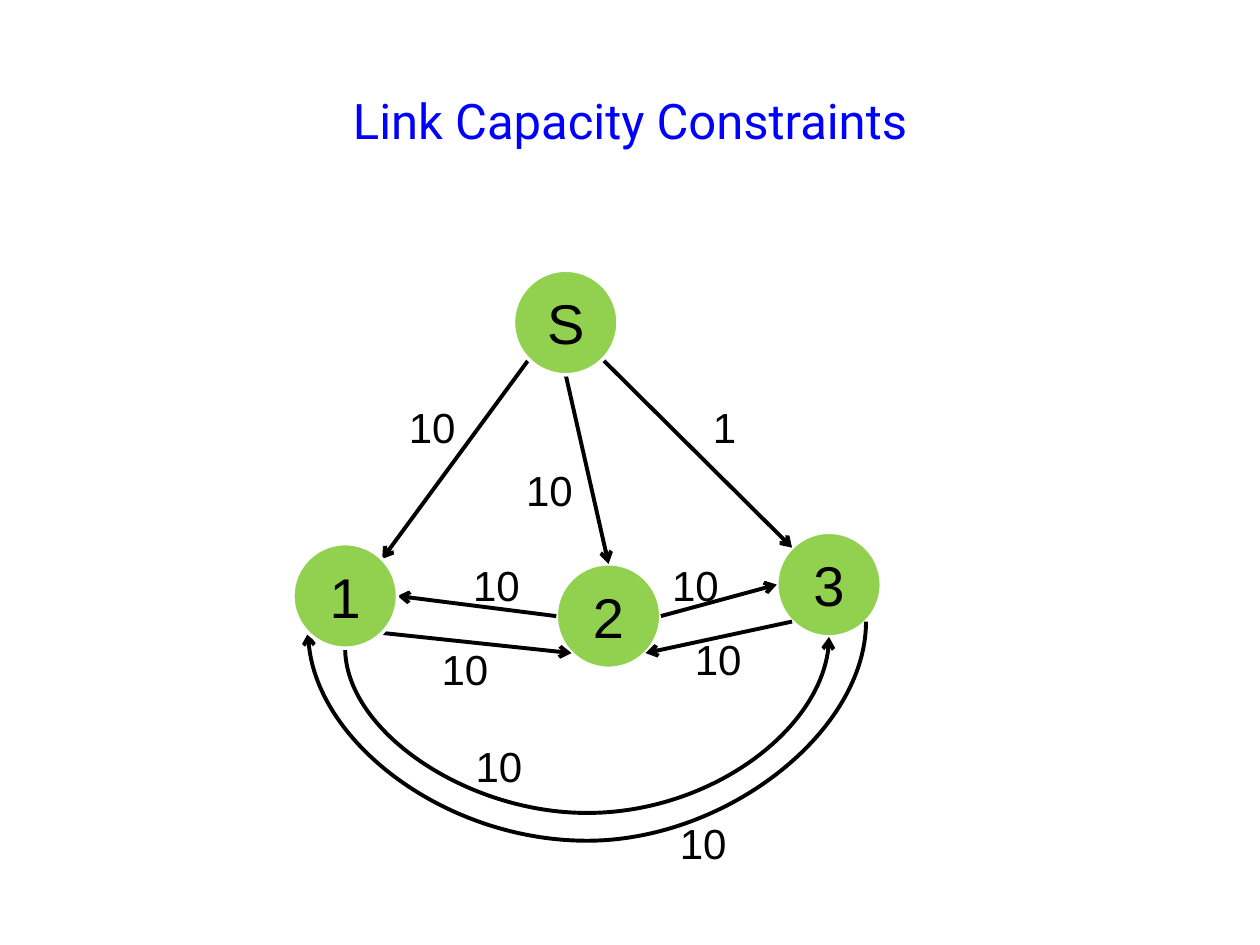
"""Builds a slide with a network graph of link capacities."""
import math

from lxml import etree
from pptx import Presentation, util as u
from pptx.dml.color import RGBColor
from pptx.enum import shapes, text
from pptx.oxml import ns

TITLE = "Link Capacity Constraints"
DIAMETER = 0.83
NODES = {"S": (4.49, 2.56), "1": (2.74, 4.73), "2": (4.83, 4.89), "3": (6.58, 4.64)}
BACK_NODES, FRONT_NODES = "32", "1S"
SITES = {"right": 0, "bottom right": 45, "bottom": 90, "bottom left": 135,
         "left": 180, "top left": 225, "top": 270, "top right": 315}
STRAIGHT_LINKS = [
    ("S", "bottom left", "1", "top right"),
    ("S", "bottom", "2", "top"),
    ("S", "bottom right", "3", "top left"),
    ("2", "left", "1", "right"),
    ("2", "right", "3", "left"),
    ("1", "bottom right", "2", "bottom left"),
    ("3", "bottom left", "2", "bottom right"),
]
CURVED_LINKS = [
    ("1", "bottom left", "3", "bottom right", 6.67, "headEnd"),
    ("1", "bottom", "3", "bottom", 6.45, "tailEnd"),
]
CAPACITIES = [
    ("10", 3.43, 3.39), ("10", 4.36, 3.89), ("1", 5.75, 3.39),
    ("10", 3.94, 4.64), ("10", 5.52, 4.64), ("10", 3.69, 5.31),
    ("10", 5.7, 5.23), ("10", 3.96, 6.08), ("10", 5.58, 6.69),
]


def color(value):
    return RGBColor.from_string(value)


def add_element(parent, tag, **attributes):
    return etree.SubElement(parent, ns.qn(tag), attributes)


def write(shape, content, size, font="Arial", ink="000000", space_before=20):
    paragraph = shape.text_frame.paragraphs[0]
    paragraph.alignment = text.PP_ALIGN.CENTER
    if space_before:
        paragraph.space_before = u.Pt(0)
        spacing = paragraph._p.pPr.find(ns.qn("a:spcBef"))
        spacing.remove(spacing[0])
        add_element(spacing, "a:spcPct", val=str(space_before * 1000))
    run = paragraph.add_run()
    run.text = content
    run.font.size = u.Pt(size)
    run.font.name = font
    run.font.color.rgb = color(ink)


def add_title(slide):
    box = slide.shapes.add_textbox(*map(u.Inches, (0.75, 0.33, 8.5, 1.25)))
    box.text_frame.word_wrap = True
    box.text_frame.vertical_anchor = text.MSO_ANCHOR.MIDDLE
    write(box, TITLE, 28, "Roboto", "0000FF", 0)


def add_node(slide, name):
    left, top = (center - DIAMETER / 2 for center in NODES[name])
    node = slide.shapes.add_shape(
        shapes.MSO_SHAPE.OVAL, *map(u.Inches, (left, top, DIAMETER, DIAMETER)))
    node.shadow.inherit = False
    node.fill.solid()
    node.fill.fore_color.rgb = color("92D050")
    node.line.color.rgb = color("FFFFFF")
    node.line.width = u.Pt(2)
    node.text_frame.vertical_anchor = text.MSO_ANCHOR.MIDDLE
    write(node, name, 32)


def site_point(name, site):
    x, y = NODES[name]
    angle = math.radians(SITES[site])
    return x + DIAMETER / 2 * math.cos(angle), y + DIAMETER / 2 * math.sin(angle)


def add_link(slide, kind, begin, end, arrow_end="tailEnd"):
    link = slide.shapes.add_connector(kind, *map(u.Inches, (*begin, *end)))
    link.line.color.rgb = color("000000")
    link.line.width = u.Pt(2.25)
    add_element(link.line._get_or_add_ln(), f"a:{arrow_end}", type="arrow")
    add_element(link._element.spPr, "a:effectLst")
    return link


def add_curved_link(slide, begin, end, lowest, arrow_end):
    (x1, y1), (x2, y2) = begin, end
    center_x, center_y = (x1 + x2) / 2, (y1 + y2) / 2
    rise, span = y1 - y2, x2 - x1
    link = add_link(slide, shapes.MSO_CONNECTOR.CURVE,
                    (center_x + rise / 2, center_y + span / 2),
                    (center_x - rise / 2, center_y - span / 2), arrow_end)
    properties = link._element.spPr
    properties.find(ns.qn("a:xfrm")).set("rot", str(90 * 60000))
    bend = round((y1 - lowest) / rise * 100000)
    adjustments = properties.find(ns.qn("a:prstGeom")).find(ns.qn("a:avLst"))
    add_element(adjustments, "a:gd", name="adj1", fmla=f"val {bend}")


def add_capacity(slide, content, center_x, center_y):
    width, height = 0.2 + 0.19 * len(content), 0.5
    box = slide.shapes.add_textbox(*map(u.Inches, (
        center_x - width / 2, center_y - height / 2, width, height)))
    box.text_frame.word_wrap = False
    box.text_frame.auto_size = text.MSO_AUTO_SIZE.SHAPE_TO_FIT_TEXT
    write(box, content, 24)


def main():
    presentation = Presentation()
    presentation.slide_width, presentation.slide_height = u.Inches(10), u.Inches(7.5)
    slide = presentation.slides.add_slide(presentation.slide_layouts[6])
    add_title(slide)
    for name in BACK_NODES:
        add_node(slide, name)
    for source, exit_site, target, entry_site in STRAIGHT_LINKS:
        add_link(slide, shapes.MSO_CONNECTOR.STRAIGHT,
                 site_point(source, exit_site), site_point(target, entry_site))
    for source, exit_site, target, entry_site, lowest, arrow_end in CURVED_LINKS:
        add_curved_link(slide, site_point(source, exit_site),
                        site_point(target, entry_site), lowest, arrow_end)
    for name in FRONT_NODES:
        add_node(slide, name)
    for capacity in CAPACITIES:
        add_capacity(slide, *capacity)
    presentation.save("out.pptx")


if __name__ == "__main__":
    main()
